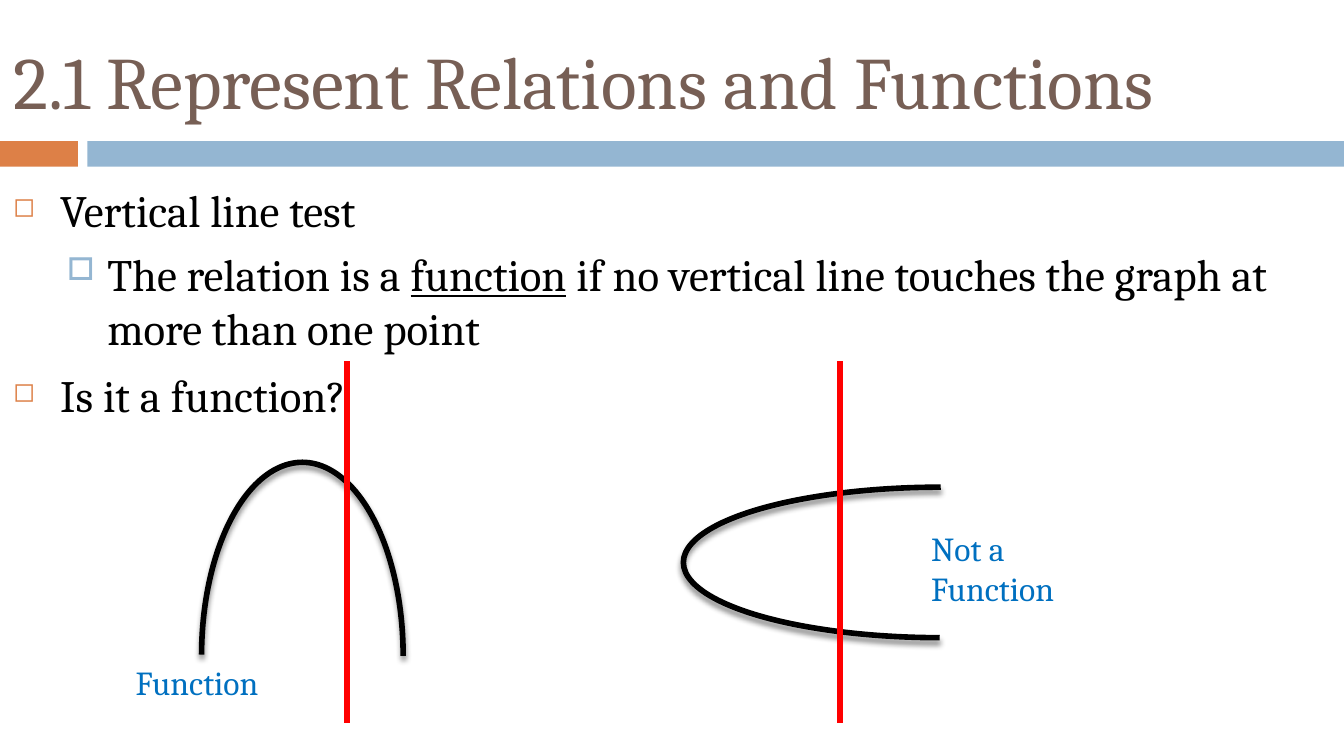
from lxml import etree
from pptx import Presentation
from pptx.dml.color import RGBColor
from pptx.enum.shapes import MSO_CONNECTOR, MSO_SHAPE
from pptx.enum.text import MSO_ANCHOR, MSO_AUTO_SIZE, PP_ALIGN
from pptx.oxml import parse_xml
from pptx.oxml.ns import nsdecls, qn
from pptx.util import Inches, Pt

RECTANGLE, ARC = MSO_SHAPE.RECTANGLE, MSO_SHAPE.ARC
STRAIGHT = MSO_CONNECTOR.STRAIGHT
LEFT, TOP, MIDDLE = PP_ALIGN.LEFT, MSO_ANCHOR.TOP, MSO_ANCHOR.MIDDLE
NO_FIT, GROW = MSO_AUTO_SIZE.NONE, MSO_AUTO_SIZE.SHAPE_TO_FIT_TEXT

FONT, BULLET_FONT = "Cambria", "OpenSymbol"
COLORS = {"title": "775F55", "accent": "DD8047", "band": "94B6D2",
          "ink": "000000", "test": "FF0000", "answer": "0070C0"}
COLORS = {name: RGBColor.from_string(value) for name, value in COLORS.items()}
CELL = Inches(0.1)  # square grid: 100 columns across the slide


def cells(*counts):
    return [round(count * CELL) for count in counts]


def style(para, size, color):
    para.alignment = LEFT
    for span in para.runs:
        span.font.name = FONT
        span.font.size = Pt(size)
        span.font.color.rgb = COLORS[color]


deck = Presentation()
deck.slide_width, deck.slide_height = cells(100, 100 * 9 / 16)
page = deck.slides.add_slide(deck.slide_layouts[5])

# Band under the title
for left, width, color in [(0, 5.8, "accent"), (6.5, 93.5, "band")]:
    bar = page.shapes.add_shape(RECTANGLE, *cells(left, 10.5, width, 1.9))
    bar.shadow.inherit = False
    bar.fill.solid()
    bar.fill.fore_color.rgb = COLORS[color]
    bar.line.fill.background()

title = page.shapes.title
title.left, title.top, title.width, title.height = cells(0, 1.9, 100, 8.1)
title.text_frame.text = "2.1 Represent Relations and Functions"
title.text_frame.auto_size = NO_FIT
title.text_frame.vertical_anchor = MIDDLE
style(title.text_frame.paragraphs[0], 39.6, "title")

# Bulleted text: level and spans, each underlined or not
points = [
    (0, [("Vertical line test", False)]),
    (1, [("The relation is a ", False), ("function", True),
         (" if no vertical line touches the graph at more than one point", False)]),
    (0, [("Is it a function?", False)]),
]
# Per level: left margin, hanging indent, space before, bullet, its color and size
levels = [(3.5, -3.5, 7, "◻", "accent", 60), (7, -3, 5.5, "□", "band", 70)]

body = page.shapes.add_textbox(*cells(0, 13.1, 100, 36.9)).text_frame
body.word_wrap = True
body.vertical_anchor = TOP
for index, (level, spans) in enumerate(points):
    para = body.add_paragraph() if index else body.paragraphs[0]
    margin, indent, before, bullet, color, percent = levels[level]
    para.level = level
    para.space_before = Pt(before)
    for text, underlined in spans:
        span = para.add_run()
        span.text = text
        if underlined:
            span.font.underline = True
    style(para, 24, "ink")
    props = para._p.get_or_add_pPr()
    for name, value in zip(("marL", "indent"), cells(margin, indent)):
        props.set(name, str(value))
    bullet_color = etree.SubElement(props, qn("a:buClr"))
    etree.SubElement(bullet_color, qn("a:srgbClr")).set("val", str(COLORS[color]))
    etree.SubElement(props, qn("a:buSzPct")).set("val", str(percent * 1000))
    etree.SubElement(props, qn("a:buFont")).set("typeface", BULLET_FONT)
    etree.SubElement(props, qn("a:buChar")).set("char", bullet)

# Curves, each a half ellipse
SHADOW = (f'<a:effectLst {nsdecls("a")}><a:outerShdw blurRad="{Pt(3)}" '
          f'dist="{Pt(2.4)}" dir="5400000" rotWithShape="0">'
          '<a:srgbClr val="000000"><a:alpha val="45000"/></a:srgbClr>'
          '</a:outerShdw></a:effectLst>')
for box, rotation in [((15, 34.4, 15, 28.8), 0), ((64.4, 22.7, 11.2, 38.3), 270)]:
    curve = page.shapes.add_shape(ARC, *cells(*box))
    curve.rotation = rotation
    curve.adjustments[0] = 108.45
    curve.adjustments[1] = 0
    curve.fill.background()
    curve.line.color.rgb = COLORS["ink"]
    curve.line.width = Pt(3)
    curve._element.spPr.append(parse_xml(SHADOW))

# Vertical test lines
for column in (25.8, 62.5):
    line = page.shapes.add_connector(STRAIGHT, *cells(column, 26.9, column, 53.8))
    line.line.color.rgb = COLORS["test"]
    line.line.width = Pt(3)
    etree.SubElement(line._element.spPr, qn("a:effectLst"))

for text, left, top, height in [("Function", 9.1, 48.8, 4),
                                ("Not a Function", 68.3, 38.8, 7.1)]:
    answer = page.shapes.add_textbox(*cells(left, top, 15.8, height)).text_frame
    answer.word_wrap = True
    answer.auto_size = GROW
    answer.text = text
    style(answer.paragraphs[0], 18, "answer")

deck.save("out.pptx")
